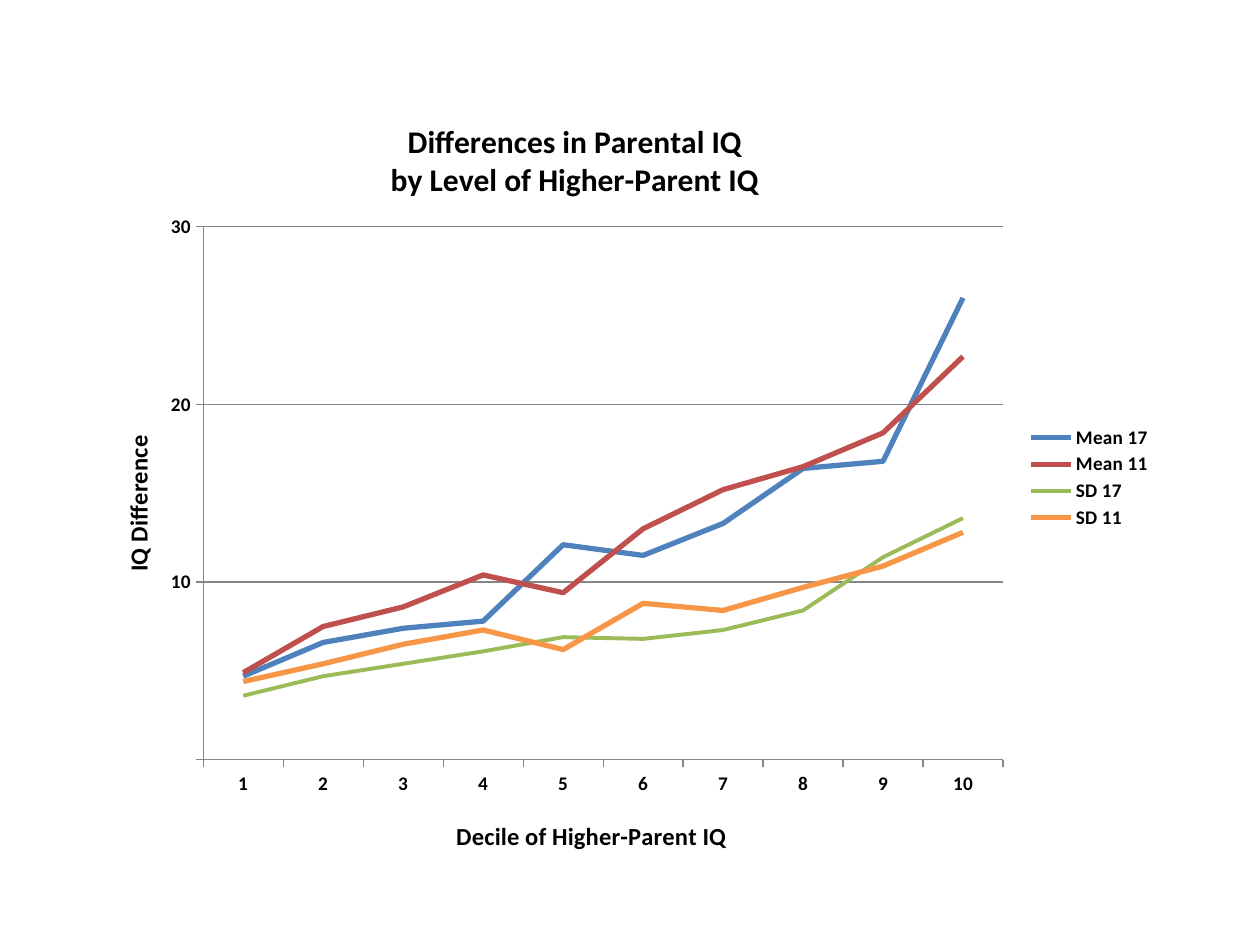
from typing import NamedTuple, Optional

from pptx import Presentation
from pptx.chart.data import CategoryChartData
from pptx.dml.color import RGBColor
from pptx.enum.chart import XL_CHART_TYPE, XL_LEGEND_POSITION, XL_MARKER_STYLE, XL_TICK_MARK
from pptx.oxml import parse_xml
from pptx.oxml.ns import nsdecls
from pptx.util import Cm, Pt

LINE_CHART = XL_CHART_TYPE.LINE
LEGEND_RIGHT = XL_LEGEND_POSITION.RIGHT
NO_MARKER = XL_MARKER_STYLE.NONE
TICK_OUTSIDE = XL_TICK_MARK.OUTSIDE

BLACK = RGBColor(0x00, 0x00, 0x00)
GRAY = RGBColor(0x86, 0x86, 0x86)
BLUE = RGBColor(0x4F, 0x81, 0xBD)
RED = RGBColor(0xC0, 0x50, 0x4D)
GREEN = RGBColor(0x9B, 0xBB, 0x59)
ORANGE = RGBColor(0xF7, 0x96, 0x46)
FONT_NAME = "Calibri"


class LineSeries(NamedTuple):
    name: str
    color: RGBColor
    width: float
    values: tuple


class Placement(NamedTuple):
    """Place inside the chart, as fractions of its size."""
    x: float
    y: float
    width: Optional[float] = None
    height: Optional[float] = None


SERIES = (
    LineSeries("Mean 17", BLUE, 3, (4.7, 6.6, 7.4, 7.8, 12.1, 11.5, 13.3, 16.4, 16.8, 26)),
    LineSeries("Mean 11", RED, 3, (4.9, 7.5, 8.6, 10.4, 9.4, 13, 15.2, 16.5, 18.4, 22.7)),
    LineSeries("SD 17", GREEN, 2.25, (3.6, 4.7, 5.4, 6.1, 6.9, 6.8, 7.3, 8.4, 11.4, 13.6)),
    LineSeries("SD 11", ORANGE, 3, (4.4, 5.4, 6.5, 7.3, 6.2, 8.8, 8.4, 9.7, 10.9, 12.8)),
)


def format_font(font, size: float, bold: bool = True) -> None:
    font.name = FONT_NAME
    font.size = Pt(size)
    font.bold = bold
    font.color.rgb = BLACK


def write_title(text_frame, lines: tuple, size: float) -> None:
    for index, line in enumerate(lines):
        paragraph = text_frame.add_paragraph() if index else text_frame.paragraphs[0]
        run = paragraph.add_run()
        run.text = line
        format_font(run.font, size)


def place(chart, parent_path: str, placement: Placement, after: str = "") -> None:
    """Give a chart part a manual layout, following the named child."""
    parent = chart._chartSpace.xpath(parent_path)[0]
    for old_layout in parent.xpath("c:layout"):
        parent.remove(old_layout)
    inner = '<c:layoutTarget val="inner"/>' if parent_path.endswith("plotArea") else ""
    modes = '<c:xMode val="edge"/><c:yMode val="edge"/>'
    sizes = "".join(
        f'<c:{tag} val="{value}"/>'
        for tag, value in zip(("x", "y", "w", "h"), placement)
        if value is not None
    )
    layout = parse_xml(
        f'<c:layout {nsdecls("c")}><c:manualLayout>{inner}{modes}{sizes}'
        "</c:manualLayout></c:layout>"
    )
    if after:
        parent.xpath(after)[0].addnext(layout)
    else:
        parent.insert(0, layout)


def format_axis(axis, title: str) -> None:
    axis.major_tick_mark = TICK_OUTSIDE
    axis.format.line.color.rgb = GRAY
    axis.format.line.width = Pt(0.75)
    format_font(axis.tick_labels.font, 11)
    write_title(axis.axis_title.text_frame, (title,), 14)


def add_iq_chart(slide) -> None:
    data = CategoryChartData()
    data.categories = [str(decile) for decile in range(1, 11)]
    for series in SERIES:
        data.add_series(series.name, series.values)
    chart = slide.shapes.add_chart(
        LINE_CHART, Cm(1.7), Cm(1.73), Cm(21.79), Cm(15.8), data
    ).chart
    format_font(chart.font, 10, bold=False)
    chart.plots[0].vary_by_categories = False

    # Titles
    chart.has_title = True
    write_title(
        chart.chart_title.text_frame,
        ("Differences in Parental IQ", "by Level of Higher-Parent IQ"),
        18,
    )
    chart.chart_title.include_in_layout = False

    # Axes
    format_axis(chart.category_axis, "Decile of Higher-Parent IQ")
    value_axis = chart.value_axis
    format_axis(value_axis, "IQ Difference")
    value_axis.minimum_scale = 0
    value_axis.maximum_scale = 30
    value_axis.major_unit = 10
    value_axis.tick_labels.number_format = "####"
    value_axis.tick_labels.number_format_is_linked = False
    value_axis.major_gridlines.format.line.color.rgb = GRAY
    value_axis.major_gridlines.format.line.width = Pt(0.75)

    # Lines
    for series, drawn in zip(SERIES, chart.plots[0].series):
        drawn.smooth = False
        drawn.marker.style = NO_MARKER
        drawn.format.line.color.rgb = series.color
        drawn.format.line.width = Pt(series.width)

    # Legend
    chart.has_legend = True
    chart.legend.position = LEGEND_RIGHT
    chart.legend.include_in_layout = False
    format_font(chart.legend.font, 11)

    # Placement of the chart parts
    place(chart, "c:chart/c:plotArea", Placement(0.11, 0.18, 0.74, 0.68))
    place(chart, "c:chart/c:title", Placement(0.28, 0.04), "c:tx")
    place(chart, "c:chart/c:plotArea/c:catAx/c:title", Placement(0.34, 0.93), "c:tx")
    place(chart, "c:chart/c:plotArea/c:valAx/c:title", Placement(0.03, 0.44), "c:tx")
    place(chart, "c:chart/c:legend", Placement(0.87, 0.43, 0.12, 0.14), "c:legendPos")


def main() -> None:
    presentation = Presentation()
    presentation.slide_width = Cm(25.4)
    presentation.slide_height = Cm(19.05)
    blank_layout = presentation.slide_layouts[6]
    slide = presentation.slides.add_slide(blank_layout)
    add_iq_chart(slide)
    presentation.save("out.pptx")


if __name__ == "__main__":
    main()
